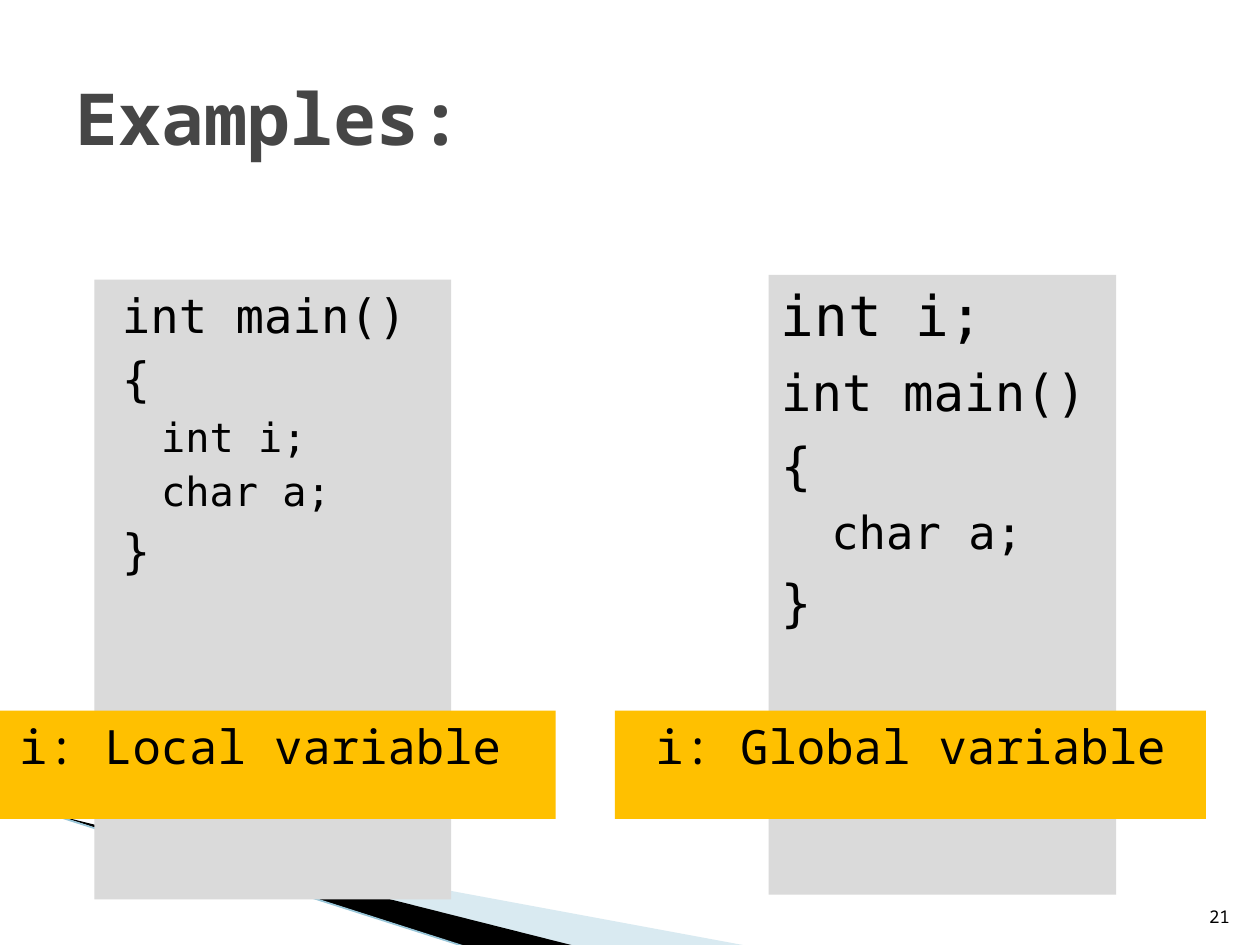
import pptx
import pptx.dml.color
import pptx.enum.shapes
import pptx.enum.text
import pptx.oxml
import pptx.oxml.ns
import pptx.util

Pt = pptx.util.Pt
ALIGN = pptx.enum.text.PP_ALIGN
ANCHOR = pptx.enum.text.MSO_ANCHOR
COLORS = {
    "text": "000000",
    "title": "464646",
    "code_panel": "DADADA",
    "caption": "FFC000",
    "wedge_pale": "A0CBDC",
    "wedge_dark": "000000",
    "edge": "97C5D8",
}
CODE_FONT = "DejaVu Sans Mono"
TEXT_FONT = "Noto Sans Mono"


def color_of(name):
    return pptx.dml.color.RGBColor.from_string(COLORS[name])


def write_paragraph(frame, text, size, font=TEXT_FONT, color="text", bold=False,
                    align=ALIGN.LEFT, margin=0, indent=0, before=0):
    """Fill the empty first paragraph, or append a new one with space before it."""
    paragraph = frame.paragraphs[0]
    if paragraph.runs:
        paragraph = frame.add_paragraph()
        paragraph.space_before = Pt(before)
    properties = paragraph._p.get_or_add_pPr()
    properties.set("marL", str(Pt(margin)))
    properties.set("indent", str(Pt(indent)))
    paragraph.alignment = align
    run = paragraph.add_run()
    run.text = text
    run.font.name = font
    run.font.size = Pt(size)
    run.font.bold = bold
    run.font.color.rgb = color_of(color)


class SlideBuilder:
    def __init__(self, slide):
        self.slide = slide

    def paint(self, shape, color, opacity=100):
        shape.shadow.inherit = False
        shape.fill.solid()
        shape.fill.fore_color.rgb = color_of(color)
        shape.line.fill.background()
        if opacity < 100:
            fill_color = shape._element.spPr.find(".//" + pptx.oxml.ns.qn("a:srgbClr"))
            alpha = pptx.oxml.parse_xml(
                f'<a:alpha {pptx.oxml.ns.nsdecls("a")} val="{opacity * 1000}"/>')
            fill_color.append(alpha)

    def wedge(self, points, color, opacity=100):
        corners = [(Pt(x), Pt(y)) for x, y in points]
        builder = self.slide.shapes.build_freeform(*corners[0])
        builder.add_line_segments(corners[1:], close=True)
        self.paint(builder.convert_to_shape(), color, opacity)

    def line(self, start, end, color, width):
        connector = self.slide.shapes.add_connector(
            pptx.enum.shapes.MSO_CONNECTOR.STRAIGHT, *map(Pt, start + end))
        connector.line.color.rgb = color_of(color)
        connector.line.width = Pt(width)
        connector._element.spPr.append(
            pptx.oxml.parse_xml(f'<a:effectLst {pptx.oxml.ns.nsdecls("a")}/>'))

    def panel(self, box, color):
        """Draw a filled rectangle and return its top-anchored text frame."""
        shape = self.slide.shapes.add_shape(
            pptx.enum.shapes.MSO_SHAPE.RECTANGLE, *map(Pt, box))
        self.paint(shape, color)
        frame = shape.text_frame
        frame.word_wrap = True
        frame.vertical_anchor = ANCHOR.TOP
        return frame

    def code(self, box, lines, outer, inner):
        """Each line is (text, size, level); outer and inner format levels 0 and 1."""
        frame = self.panel(box, "code_panel")
        for text, size, level in lines:
            write_paragraph(frame, text, size, font=CODE_FONT, **(outer, inner)[level])

    def caption(self, left, text):
        frame = self.panel((left, 406.1, 337.7, 61.9), "caption")
        write_paragraph(frame, text, 27, align=ALIGN.CENTER)

    def label(self, box, text, size, anchor, **text_format):
        frame = self.slide.shapes.add_textbox(*map(Pt, box)).text_frame
        frame.word_wrap = True
        frame.vertical_anchor = anchor
        write_paragraph(frame, text, size, **text_format)


def main():
    presentation = pptx.Presentation()
    presentation.slide_width = Pt(720)
    presentation.slide_height = Pt(540)
    builder = SlideBuilder(presentation.slides.add_slide(presentation.slide_layouts[6]))

    builder.wedge([(39.6, 468.7), (428.4, 540.7), (328.3, 540.7), (39.6, 468)],
                  "wedge_pale", opacity=40)
    builder.wedge([(38.2, 467.3), (329, 540.7), (267.8, 541.4), (38.9, 468)],
                  "wedge_dark")
    builder.line((-0.7, 455.8), (267.1, 541.4), "edge", 0.95)

    builder.code(
        (54, 159.8, 203.8, 354.2),
        [("int main()", 27, 0), ("{", 27, 0), ("int i;", 23, 1),
         ("char a;", 23, 1), ("}", 27, 0)],
        outer={"margin": 28.8, "indent": -20.2, "before": 4},
        inner={"margin": 49, "indent": -18, "before": 3.2})
    builder.label((681.1, 504.7, 28.8, 28.8), "21", 10, ANCHOR.BOTTOM,
                  align=ALIGN.RIGHT)
    builder.label((36, 21.6, 648, 90), "Examples:", 41, ANCHOR.MIDDLE,
                  color="title", bold=True)
    builder.code(
        (439.2, 157, 198.7, 354.2),
        [("int i;", 32, 0), ("int main()", 29, 0), ("{", 29, 0),
         ("char a;", 26, 1), ("}", 29, 0)],
        outer={"margin": 25.2, "indent": -25.2, "before": 7},
        inner={"margin": 50.4, "indent": -21.6, "before": 5.5})
    builder.caption(-20.2, "i: Local variable")
    builder.caption(351.4, "i: Global variable")

    presentation.save("out.pptx")


if __name__ == "__main__":
    main()
